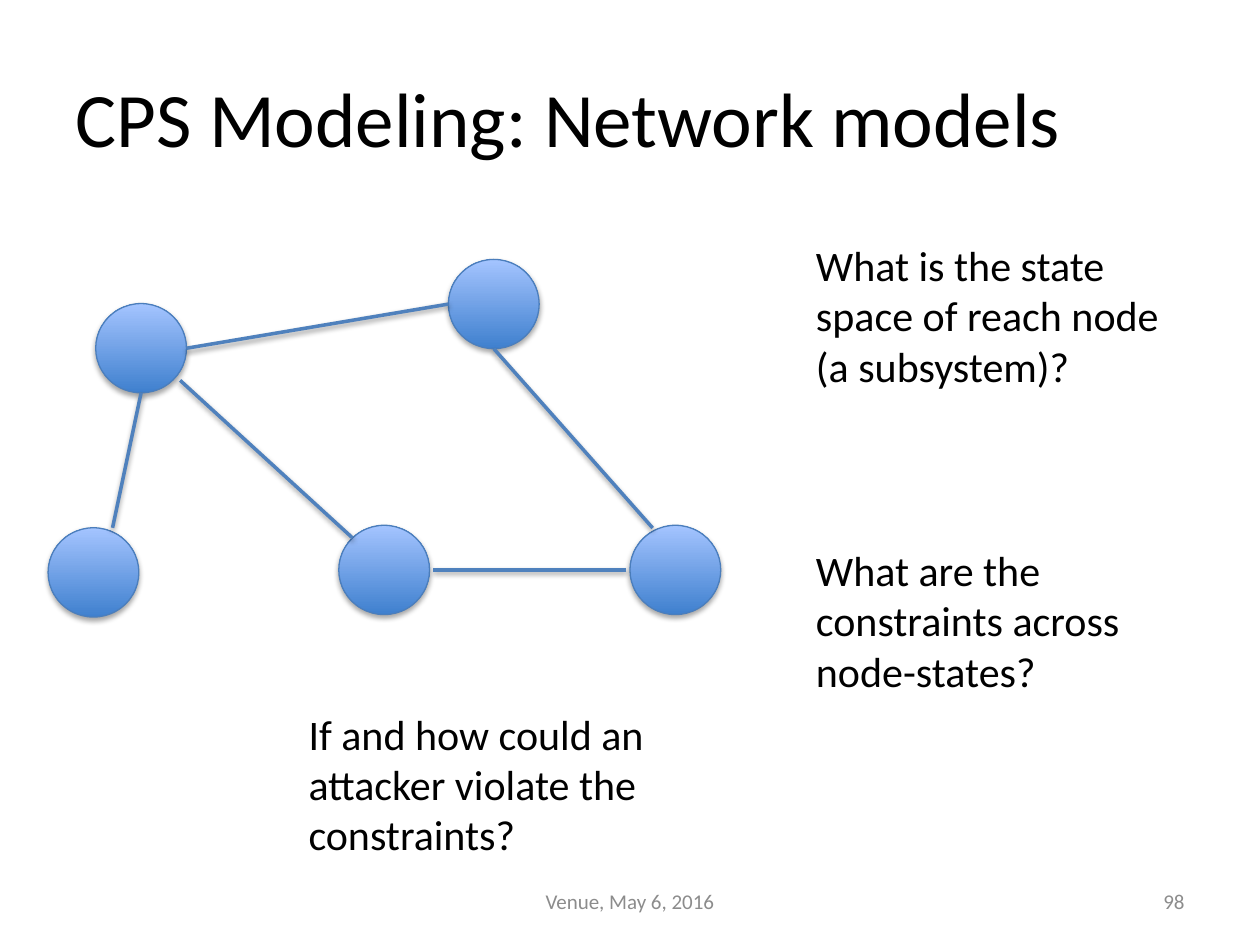
from lxml import etree
from pptx import Presentation
from pptx import util as u
from pptx.dml import color
from pptx.enum import shapes, text
from pptx.oxml import ns

COLORS = {
    "text": "000000", "footer": "8C8C8C", "edge": "4F81BD", "outline": "4B7EBC",
    "node_dark": "3F80CE", "node_light": "A4C4FF", "shadow": "000000",
}
FONT = "Calibri"
NODE_WIDTH, NODE_HEIGHT = 1.83, 1.8
NODES = {
    "hub": (0.96, 0.89), "right": (11.73, 5.36), "left": (0, 5.41),
    "middle": (5.86, 5.36), "top": (8.07, 0),
}
EDGES = [
    ("hub", (0.5, 1), "left", (0.71, 0)),
    ("hub", (1, 0.5), "top", (0, 0.5)),
    ("hub", (0.93, 0.86), "middle", (0.15, 0.14)),
    ("top", (0.5, 1), "right", (0.25, 0.03)),
    ("right", (-0.04, 0.5), "middle", (1.04, 0.5)),
]


def rgb(name):
    """Return the named colour."""
    return color.RGBColor.from_string(COLORS[name])


def add_shadow(shape, distance, opacity):
    """Give a shape a soft shadow straight below it."""
    effects = etree.SubElement(shape._element.spPr, ns.qn("a:effectLst"))
    shadow = etree.SubElement(
        effects, ns.qn("a:outerShdw"), blurRad=str(u.Pt(3.1)),
        dist=str(u.Pt(distance)), dir="5400000", rotWithShape="0")
    tone = etree.SubElement(shadow, ns.qn("a:srgbClr"), val=COLORS["shadow"])
    etree.SubElement(tone, ns.qn("a:alpha"), val=str(opacity * 1000))


def write_text(shape, words, size, fill="text", align=text.PP_ALIGN.LEFT,
               anchor=text.MSO_ANCHOR.TOP):
    """Write one formatted paragraph into a shape."""
    frame = shape.text_frame
    frame.word_wrap = True
    frame.vertical_anchor = anchor
    paragraph = frame.paragraphs[0]
    paragraph.alignment = align
    run = paragraph.add_run()
    run.text = words
    run.font.size = u.Pt(size)
    run.font.name = FONT
    run.font.color.rgb = rgb(fill)


def add_text(slide, box, words, size, **style):
    """Add a text box with one formatted paragraph."""
    write_text(slide.shapes.add_textbox(*map(u.Cm, box)), words, size, **style)


def place_title(slide, box, words):
    """Move the title placeholder into the box and fill it."""
    title = slide.shapes.title
    title.left, title.top, title.width, title.height = map(u.Cm, box)
    write_text(title, words, 44, anchor=text.MSO_ANCHOR.MIDDLE)


def add_node(group, left, top):
    """Add one shaded round node."""
    node = group.shapes.add_shape(
        shapes.MSO_SHAPE.OVAL, *map(u.Cm, (left, top, NODE_WIDTH, NODE_HEIGHT)))
    node.fill.gradient()
    node.fill.gradient_angle = 90
    stops = zip(node.fill.gradient_stops, ("node_dark", "node_light"), (0, 1))
    for stop, name, position in stops:
        stop.color.rgb = rgb(name)
        stop.position = position
    node.line.color.rgb = rgb("outline")
    node.line.width = u.Pt(0.75)
    add_shadow(node, 1.8, 35)


def add_edge(group, start, end):
    """Add one straight edge between two points."""
    edge = group.shapes.add_connector(
        shapes.MSO_CONNECTOR.STRAIGHT, *map(u.Cm, start + end))
    edge.line.color.rgb = rgb("edge")
    edge.line.width = u.Pt(2)
    add_shadow(edge, 1.6, 38)


def add_network(slide, left, top):
    """Draw the grouped nodes and edges from the given corner."""
    group = slide.shapes.add_group_shape()

    def anchor(name, fraction):
        """Locate a point given as a fraction of a node's size."""
        x, y = NODES[name]
        return (left + x + fraction[0] * NODE_WIDTH,
                top + y + fraction[1] * NODE_HEIGHT)

    for x, y in NODES.values():
        add_node(group, left + x, top + y)
    for start, start_at, end, end_at in EDGES:
        add_edge(group, anchor(start, start_at), anchor(end, end_at))


def add_questions(slide, width, height):
    """Place the three questions around the network."""
    for left, top, words in (
        (16.2, 4.7, "What is the state space of reach node (a subsystem)?"),
        (16.2, 10.85, "What are the constraints across node-states?"),
        (5.97, 14.15, "If and how could an attacker violate the constraints?"),
    ):
        add_text(slide, (left, top, width, height), words, 24)


def add_footer(slide, top, height):
    """Place the slide number and the event line."""
    for left, width, words, align in (
        (18.2, 5.93, "98", text.PP_ALIGN.RIGHT),
        (8.68, 8.04, "Venue, May 6, 2016", text.PP_ALIGN.CENTER),
    ):
        add_text(slide, (left, top, width, height), words, 12, fill="footer",
                 align=align, anchor=text.MSO_ANCHOR.MIDDLE)


def main():
    """Build and save the slide."""
    presentation = Presentation()
    presentation.slide_width, presentation.slide_height = u.Cm(25.4), u.Cm(19.05)
    slide = presentation.slides.add_slide(presentation.slide_layouts[5])
    place_title(slide, (1.27, 0.76, 22.86, 3.18), "CPS Modeling: Network models")
    add_network(slide, 0.97, 5.23)
    add_questions(slide, 7.93, 3.33)
    add_footer(slide, 17.65, 1.02)
    presentation.save("out.pptx")


if __name__ == "__main__":
    main()
